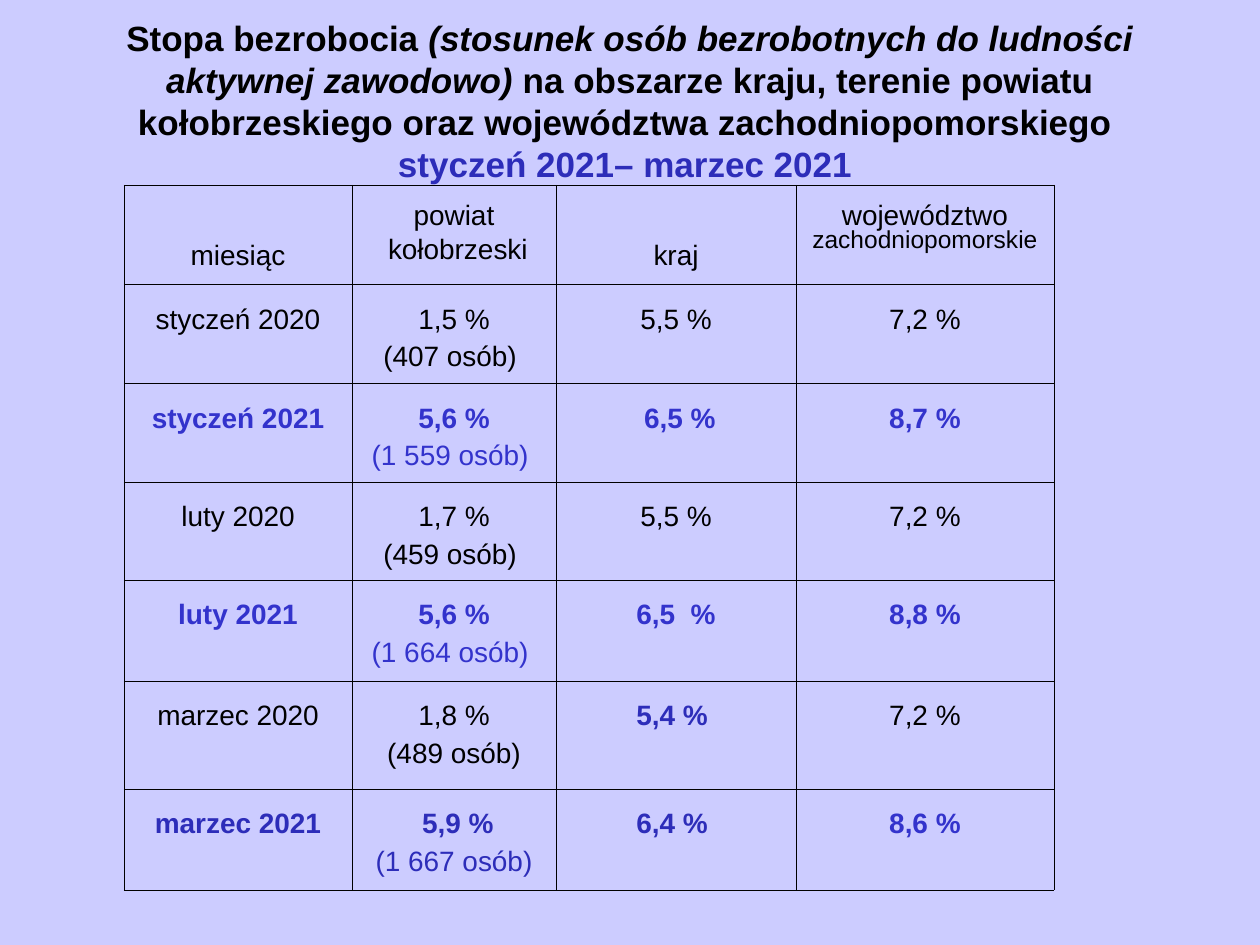
"""Build a slide with a table of unemployment rates for the county, country and voivodeship."""
import pptx
import pptx.dml.color
import pptx.enum.text
import pptx.oxml
import pptx.oxml.ns
import pptx.util

PX = 914400 // 126
BLACK, BLUE, NAVY = "000000", "3333CC", "2D2DB9"


def rgb(value):
    return pptx.dml.color.RGBColor.from_string(value)


def add_text(p, text, size=16, color=BLACK, bold=False, italic=False):
    p.alignment = pptx.enum.text.PP_ALIGN.CENTER
    r = p.add_run()
    r.text = text
    r.font.name = "Arial"
    r.font.size = pptx.util.Pt(size)
    r.font.bold = bold
    r.font.italic = italic
    r.font.color.rgb = rgb(color)


prs = pptx.Presentation()
prs.slide_width = pptx.util.Inches(10)
prs.slide_height = pptx.util.Inches(7.5)
s = prs.slides.add_slide(prs.slide_layouts[6])
s.background.fill.solid()
s.background.fill.fore_color.rgb = rgb("CCCCFF")

sp = s.shapes.add_textbox(63 * PX, 16 * PX, 1134 * PX, 169 * PX)
tf = sp.text_frame
tf.word_wrap = True
tf.vertical_anchor = pptx.enum.text.MSO_ANCHOR.MIDDLE
p = tf.paragraphs[0]
add_text(p, "Stopa bezrobocia ", size=20, bold=True)
add_text(p, "(stosunek osób bezrobotnych do ludności aktywnej zawodowo)", size=20, bold=True, italic=True)
add_text(p, " na obszarze kraju, terenie powiatu kołobrzeskiego oraz województwa zachodniopomorskiego ",
         size=20, bold=True)
p.add_line_break()
add_text(p, "styczeń 2021– marzec 2021 ", size=20, color=NAVY, bold=True)

widths = [228, 204, 240, 258]
heights = [99, 99, 99, 97, 101, 108, 101]
rows = [
    ["miesiąc", "powiat\n kołobrzeski", "kraj", "województwo "],
    ["styczeń 2020", "1,5 %\n(407 osób) ", "5,5 %", "7,2 %"],
    ["styczeń 2021", "5,6 %\n(1 559 osób) ", " 6,5 %", "8,7 %"],
    ["luty 2020", "1,7 %\n(459 osób) ", "5,5 %", "7,2 %"],
    ["luty 2021", "5,6 %\n(1 664 osób) ", "6,5  %", "8,8 %"],
    ["marzec 2020", "1,8 %\n(489 osób)", "5,4 % ", "7,2 %"],
    ["marzec 2021", " 5,9 %\n(1 667 osób)", "6,4 % ", "8,6 %"],
]
navy_cells = {(5, 2), (6, 0), (6, 1), (6, 2)}
low_headers = {(0, 0), (0, 2)}

table = s.shapes.add_table(len(rows), len(widths), 124 * PX, 185 * PX,
                           sum(widths) * PX, sum(heights) * PX).table
table.first_row = False
table.horz_banding = False
for column, width in zip(table.columns, widths):
    column.width = width * PX
for row, height in zip(table.rows, heights):
    row.height = height * PX

for i, row in enumerate(rows):
    for j, text in enumerate(row):
        cell = table.cell(i, j)
        cell.margin_top = (60 if (i, j) in low_headers else 25 if i else 20) * PX
        outer = {"L": j == 0, "R": j == len(widths) - 1, "T": i == 0, "B": False}
        for side, is_outer in outer.items():
            line_width = pptx.util.Pt(0.23 if is_outer else 0.11)
            cell._tc.get_or_add_tcPr().append(pptx.oxml.parse_xml(
                f'<a:ln{side} {pptx.oxml.ns.nsdecls("a")} w="{line_width}">'
                f'<a:solidFill><a:srgbClr val="{BLACK}"/></a:solidFill></a:ln{side}>'))
        cell.fill.background()

        navy = (i, j) in navy_cells
        current = navy or row[0].endswith("2021")
        color = NAVY if navy else BLUE if current else BLACK
        tf = cell.text_frame
        for k, line in enumerate(text.split("\n")):
            p = tf.add_paragraph() if k else tf.paragraphs[0]
            p.line_spacing = 0.81
            p.space_before = pptx.util.Pt(7 if i else 5)
            add_text(p, line, color=color, bold=current and k == 0)

add_text(table.cell(0, 3).text_frame.paragraphs[0], "zachodniopomorskie", size=14)

prs.save("out.pptx")
